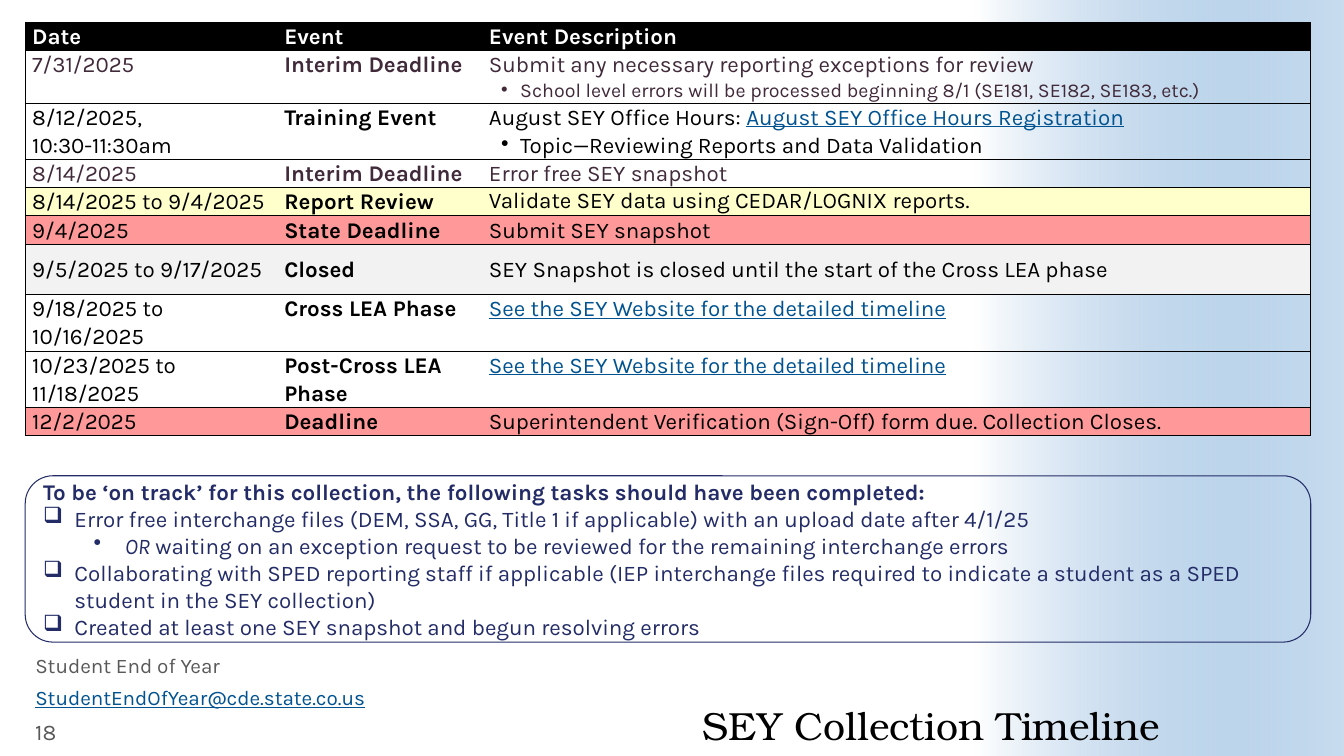
"""Build the SEY Collection Timeline slide."""
import pptx
import pptx.dml.color
import pptx.enum.shapes
import pptx.enum.text
import pptx.oxml
import pptx.oxml.ns
import pptx.util
from lxml import etree

Inches = pptx.util.Inches
Pt = pptx.util.Pt
ANCHOR = pptx.enum.text.MSO_ANCHOR
SHAPE = pptx.enum.shapes.MSO_SHAPE

THEME = {
    "sans": "Karla", "serif": "TeX Gyre Bonum",
    "title": 28, "text": 16, "footer": 14.8, "small": 14, "rule": 0.5, "frame": 0.75,
    "black": "000000", "white": "FFFFFF", "plum": "412A3A", "link": "005390",
    "navy": "232C67", "grey": "595959", "sky": "488BC9",
    "yellow": "FFFFCC", "red": "FF9999", "silver": "F2F2F2",
}
LINK = {"color": "link", "underline": True}
BULLET = {"bullet": "•", "margin": 0.31, "hang": 0.19}
CHECK = {"bullet": "❑", "margin": 0.31, "hang": 0.31}
WEBSITE = [("See the SEY Website for the detailed timeline", LINK)]

TITLE = "SEY Collection Timeline"
HEADER = ("Date", "Event", "Event Description")
ROWS = [
    ("7/31/2025", "Interim Deadline", [
        ("Submit any necessary reporting exceptions for review", {}),
        ("School level errors will be processed beginning 8/1 (SE181, SE182, SE183, etc.)",
         {**BULLET, "size": "small"})], "plum", None, 0.52),
    ("8/12/2025,\n10:30-11:30am", "Training Event", [
        ("August SEY Office Hours: ", {}),
        ("August SEY Office Hours Registration", {**LINK, "join": True}),
        ("Topic—Reviewing Reports and Data Validation", BULLET)], "black", None, 0.56),
    ("8/14/2025", "Interim Deadline", [("Error free SEY snapshot", {})], "plum", None, 0.28),
    ("8/14/2025 to 9/4/2025", "Report Review",
     [("Validate SEY data using CEDAR/LOGNIX reports.", {"spacing": 1.0})],
     "black", "yellow", 0.28),
    ("9/4/2025", "State Deadline", [("Submit SEY snapshot", {})], "black", "red", 0.28),
    ("9/5/2025 to 9/17/2025", "Closed",
     [("SEY Snapshot is closed until the start of the Cross LEA phase", {})],
     "black", "silver", 0.5),
    ("9/18/2025 to 10/16/2025", "Cross LEA Phase", WEBSITE, "black", None, 0.56),
    ("10/23/2025 to 11/18/2025", "Post-Cross LEA Phase", WEBSITE, "black", None, 0.56),
    ("12/2/2025", "Deadline",
     [("Superintendent Verification (Sign-Off) form due. Collection Closes.", {})],
     "black", "red", 0.28),
]
TASKS = [
    ("To be ‘on track’ for this collection, the following tasks should have been completed:",
     {"bold": True}),
    ("Error free interchange files (DEM, SSA, GG, Title 1 if applicable) with an upload date "
     "after 4/1/25", CHECK),
    ("OR", {"bullet": "•", "margin": 0.81, "hang": 0.31, "level": 1, "italic": True}),
    (" waiting on an exception request to be reviewed for the remaining interchange errors",
     {"join": True}),
    ("Collaborating with SPED reporting staff if applicable (IEP interchange files required to "
     "indicate a student as a SPED student in the SEY collection)", CHECK),
    ("Created at least one SEY snapshot and begun resolving errors", CHECK),
]
FOOTER = [("Student End of Year", {"color": "grey"}), ("StudentEndOfYear@cde.state.co.us", LINK)]
PAGE = "18"

LEFT, WIDTH = 0.25, 12.75
COLUMNS = (2.5, 2.03, 8.22)
HEADER_HEIGHT = 0.28


def rgb(name):
    """Return a theme colour."""
    return pptx.dml.color.RGBColor.from_string(THEME[name])


def put(tf, text, size="text", color="black", font="sans", bold=False, italic=False,
        underline=False, spacing=1.0, align="LEFT", bullet=None, margin=0, hang=0,
        level=0, join=False):
    """Add a formatted paragraph, or join a run to the last one."""
    p = tf.paragraphs[-1]
    if not join:
        if p.runs:
            p = tf.add_paragraph()
        p.level = level
        p.alignment = getattr(pptx.enum.text.PP_ALIGN, align)
        p.line_spacing = spacing
        p.space_before = p.space_after = Pt(0)
        pPr = p._p.get_or_add_pPr()
        pPr.set("marL", str(Inches(margin)))
        pPr.set("indent", str(-Inches(hang)))
        mark = etree.SubElement(pPr, pptx.oxml.ns.qn("a:buChar" if bullet else "a:buNone"))
        if bullet:
            mark.set("char", bullet)
    for i, line in enumerate(text.split("\n")):
        if i:
            p.add_line_break()
        r = p.add_run()
        r.text = line
        r.font.name, r.font.size = THEME[font], Pt(THEME[size])
        r.font.bold, r.font.italic, r.font.underline = bold, italic, underline
        r.font.color.rgb = rgb(color)


def place(sp, left, top, width, height):
    """Move a shape, given inches."""
    sp.left, sp.top = Inches(left), Inches(top)
    sp.width, sp.height = Inches(width), Inches(height)


def prepare(tf, anchor, inset=None):
    """Set wrapping, anchor and optional equal insets."""
    tf.word_wrap = True
    tf.auto_size = pptx.enum.text.MSO_AUTO_SIZE.NONE
    tf.vertical_anchor = anchor
    if inset is not None:
        tf.margin_left = tf.margin_right = tf.margin_top = tf.margin_bottom = Inches(inset)


def border(cell, sides):
    """Rule the named sides of a cell and clear the others."""
    tcPr = cell._tc.get_or_add_tcPr()
    for side in "LRTB":
        ln = etree.SubElement(tcPr, pptx.oxml.ns.qn("a:ln" + side), w=str(Pt(THEME["rule"])))
        if side in sides:
            fill = etree.SubElement(ln, pptx.oxml.ns.qn("a:solidFill"))
            etree.SubElement(fill, pptx.oxml.ns.qn("a:srgbClr"), val=THEME["black"])
        else:
            etree.SubElement(ln, pptx.oxml.ns.qn("a:noFill"))


def add_background(s):
    """Add the fading band at the right edge."""
    sp = s.shapes.add_shape(SHAPE.RECTANGLE, Inches(7.75), Inches(1.92), Inches(7.5), Inches(3.66))
    sp.rotation = 270
    sp.shadow.inherit = False
    sp.line.fill.background()
    sp.fill.gradient()
    sp.fill.gradient_angle = 270
    for stop, color, position in zip(sp.fill.gradient_stops, ("white", "sky"), (0, 1)):
        stop.color.rgb, stop.position = rgb(color), position
    sky = sp.element.findall(".//" + pptx.oxml.ns.qn("a:srgbClr"))[-1]
    etree.SubElement(sky, pptx.oxml.ns.qn("a:alpha"), val="30000")
    s.shapes._spTree.insert(2, sp.element)


def add_timeline(s):
    """Add the table of dates and events."""
    header = (*HEADER[:2], [(HEADER[2], {"bold": True})], "white", "black", HEADER_HEIGHT)
    rows = [header, *ROWS]
    height = sum(row[-1] for row in rows)
    table = s.shapes.add_table(len(rows), len(COLUMNS), Inches(LEFT), Inches(0.22),
                               Inches(WIDTH), Inches(height)).table
    table.horz_banding = False
    for column, width in zip(table.columns, COLUMNS):
        column.width = Inches(width)
    for i, (date, event, description, color, fill, row_height) in enumerate(rows):
        table.rows[i].height = Inches(row_height)
        texts = ([(date, {"bold": i == 0})], [(event, {"bold": True})], description)
        for j, (paragraphs, sides) in enumerate(zip(texts, ("LTB", "TB", "RTB"))):
            cell = table.cell(i, j)
            cell.margin_left = cell.margin_right = Inches(0.07)
            cell.margin_top = cell.margin_bottom = 0
            cell.vertical_anchor = ANCHOR.MIDDLE if fill == "silver" else ANCHOR.TOP
            border(cell, sides)
            if fill:
                cell.fill.solid()
                cell.fill.fore_color.rgb = rgb(fill)
            else:
                cell.fill.background()
            for text, style in paragraphs:
                put(cell.text_frame, text, **{"color": color, "spacing": 1.07, **style})


def add_tasks(s):
    """Add the rounded checklist."""
    sp = s.shapes.add_shape(SHAPE.ROUNDED_RECTANGLE, Inches(LEFT), Inches(4.72),
                            Inches(WIDTH), Inches(1.65))
    sp.shadow.inherit = False
    sp.fill.background()
    sp.line.color.rgb, sp.line.width = rgb("navy"), Pt(THEME["frame"])
    prepare(sp.text_frame, ANCHOR.MIDDLE)
    for text, style in TASKS:
        put(sp.text_frame, text, color="navy", **style)


def main():
    """Assemble and save the slide."""
    prs = pptx.Presentation()
    prs.slide_width, prs.slide_height = Inches(13.33), Inches(7.5)
    s = prs.slides.add_slide(prs.slide_layouts[3])
    title, *bodies = list(s.placeholders)[:3]
    add_background(s)
    place(title, 4.26, 6.45, 7.24, 0.98)
    prepare(title.text_frame, ANCHOR.BOTTOM, 0)
    put(title.text_frame, TITLE, size="title", font="serif", spacing=0.9, align="RIGHT")
    add_timeline(s)
    add_tasks(s)
    for i, (sp, (text, style)) in enumerate(zip(bodies, FOOTER)):
        place(sp, LEFT, 6.47 + 0.32 * i, 3.89, 0.31)
        prepare(sp.text_frame, ANCHOR.TOP)
        put(sp.text_frame, text, size="footer", spacing=0.8, **style)
    page = s.shapes.add_textbox(Inches(LEFT), Inches(7.1), Inches(0.85), Inches(0.31))
    prepare(page.text_frame, ANCHOR.MIDDLE)
    put(page.text_frame, PAGE, color="grey")
    prs.save("out.pptx")


if __name__ == "__main__":
    main()
